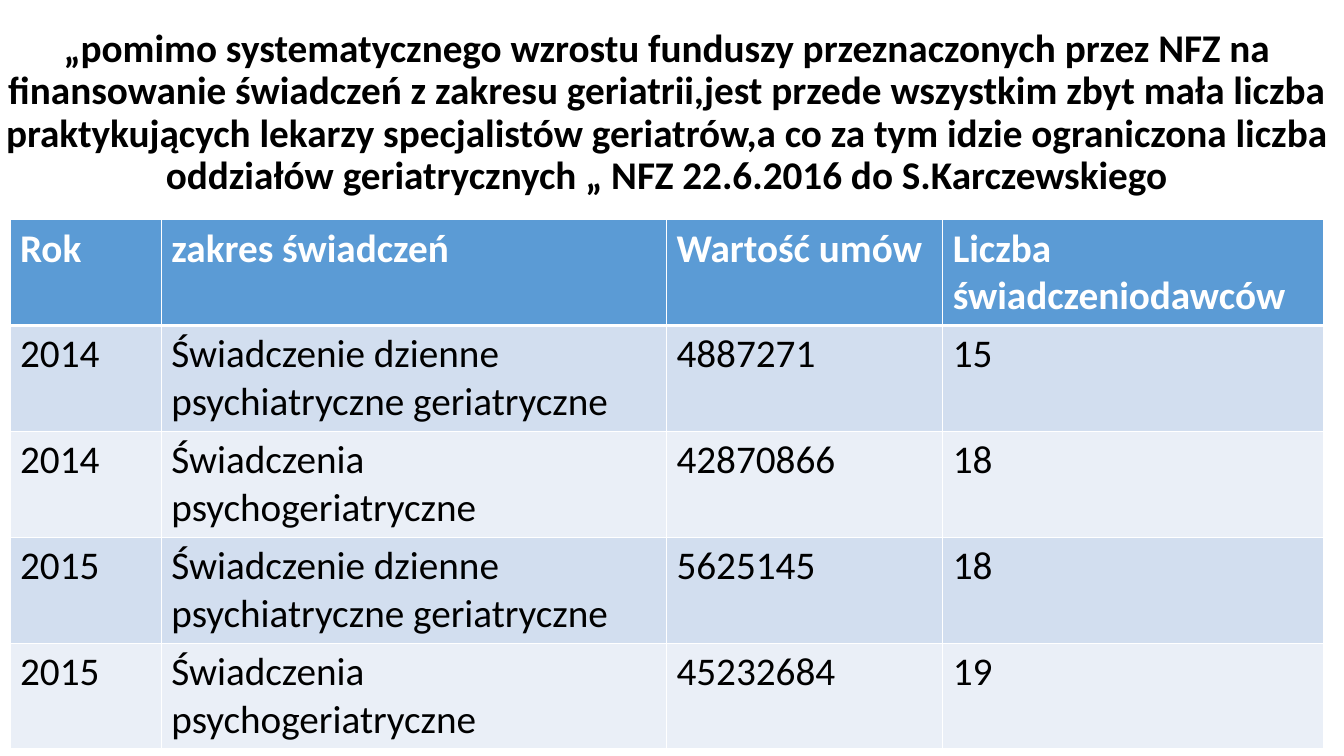
"""Build a slide on geriatric care funding: a bold statement above a contract table."""
from lxml.etree import SubElement
from pptx import Presentation
from pptx.dml.color import RGBColor
from pptx.enum.text import MSO_ANCHOR, PP_ALIGN
from pptx.oxml.ns import qn
from pptx.util import Inches, Pt

THEME = {
    "font": "Calibri",
    "size": 28,
    "text": "000000",
    "line": "FFFFFF",
    "header_text": "FFFFFF",
    "header": "5B9BD5",
    "bands": ("D2DEEF", "EAEFF7"),
}
TITLE = (
    "„pomimo systematycznego wzrostu funduszy przeznaczonych przez NFZ na "
    "finansowanie świadczeń z zakresu geriatrii,jest przede wszystkim zbyt mała liczba "
    "praktykujących lekarzy specjalistów geriatrów,a co za tym idzie ograniczona liczba "
    "oddziałów geriatrycznych „ NFZ 22.6.2016 do S.Karczewskiego"
)
DAY_CARE = "Świadczenie dzienne psychiatryczne geriatryczne"
PSYCHOGERIATRIC = "Świadczenia psychogeriatryczne"
ROWS = [
    ("Rok", "zakres świadczeń", "Wartość umów", "Liczba świadczeniodawców"),
    ("2014", DAY_CARE, "4887271", "15"),
    ("2014", PSYCHOGERIATRIC, "42870866", "18"),
    ("2015", DAY_CARE, "5625145", "18"),
    ("2015", PSYCHOGERIATRIC, "45232684", "19"),
]
COL_WIDTHS = (1.5, 5.01, 2.74, 3.78)
ROW_HEIGHT = 1.05


def set_text(tf, text, color, bold):
    """Fill a text frame with one formatted run."""
    tf.text = text
    font = tf.paragraphs[0].runs[0].font
    font.name, font.size, font.bold = THEME["font"], Pt(THEME["size"]), bold
    font.color.rgb = RGBColor.from_string(color)


def add_border(cell, side, width):
    """Draw one solid edge of a table cell."""
    ln = SubElement(cell._tc.get_or_add_tcPr(), qn(f"a:ln{side}"), w=str(Pt(width)))
    SubElement(SubElement(ln, qn("a:solidFill")), qn("a:srgbClr"), val=THEME["line"])


prs = Presentation()
prs.slide_width, prs.slide_height = Inches(13.33), Inches(7.5)
s = prs.slides.add_slide(prs.slide_layouts[6])

title = s.shapes.add_textbox(Inches(-0.11), Inches(0.4), Inches(13.44), Inches(1.45))
tf = title.text_frame
tf.word_wrap = True
tf.vertical_anchor = MSO_ANCHOR.MIDDLE
set_text(tf, TITLE, THEME["text"], True)
p = tf.paragraphs[0]
p.alignment = PP_ALIGN.CENTER
p.line_spacing = 0.9

table = s.shapes.add_table(
    len(ROWS), len(COL_WIDTHS), Inches(0.1), Inches(2.18),
    Inches(sum(COL_WIDTHS)), Inches(ROW_HEIGHT * len(ROWS)),
).table
for column, width in zip(table.columns, COL_WIDTHS):
    column.width = Inches(width)

for i, values in enumerate(ROWS):
    is_header = i == 0
    fill = THEME["header"] if is_header else THEME["bands"][(i - 1) % 2]
    color = THEME["header_text"] if is_header else THEME["text"]
    edges = {"L": 1, "R": 1, "T": 3 if i == 1 else 1, "B": 3 if is_header else 1}
    for j, value in enumerate(values):
        cell = table.cell(i, j)
        set_text(cell.text_frame, value, color, is_header)
        for side, width in edges.items():
            add_border(cell, side, width)
        cell.fill.solid()
        cell.fill.fore_color.rgb = RGBColor.from_string(fill)

prs.save("out.pptx")
